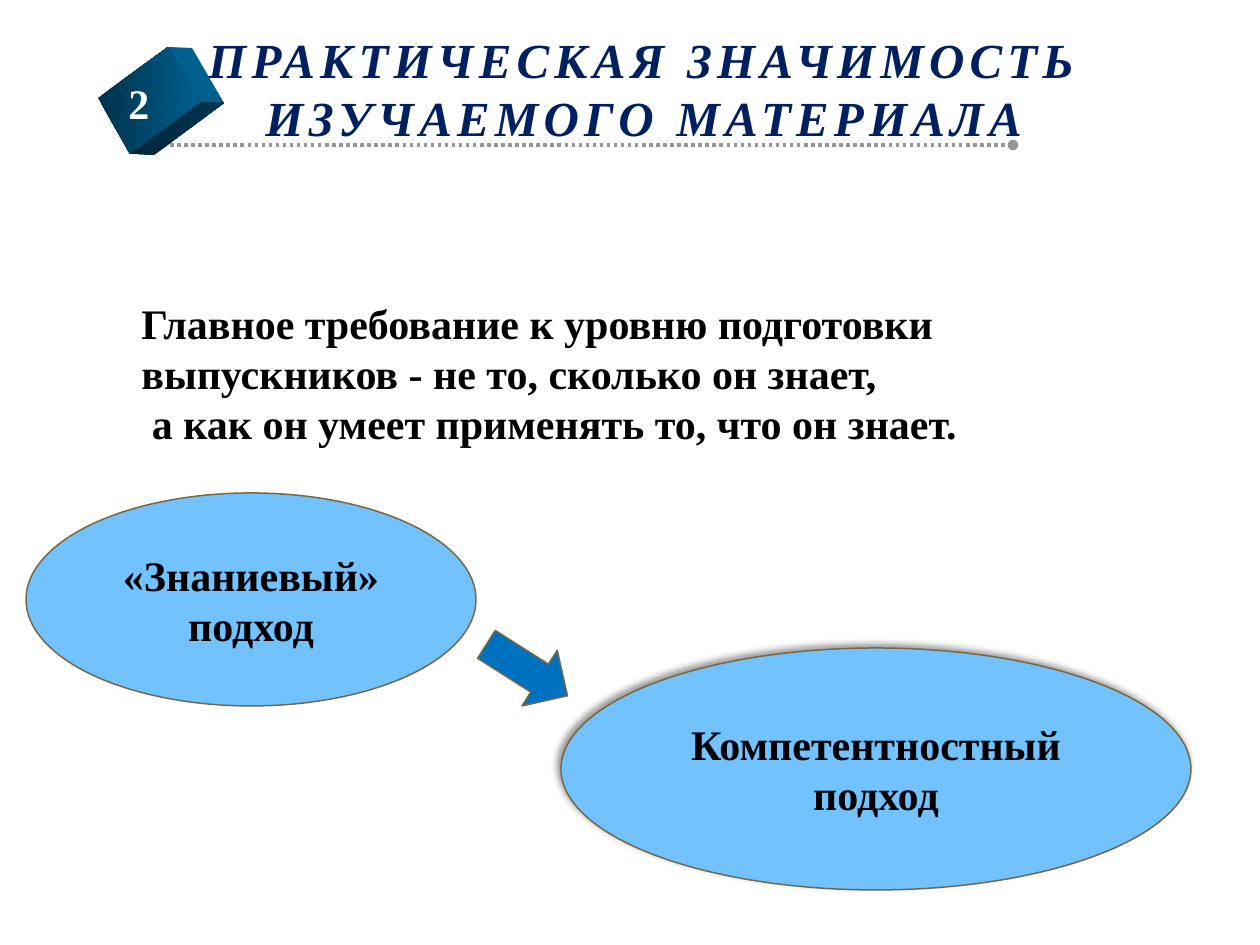
from lxml import etree
from pptx import Presentation
from pptx.dml.color import RGBColor
from pptx.enum.dml import MSO_LINE
from pptx.enum.shapes import MSO_CONNECTOR, MSO_SHAPE
from pptx.enum.text import MSO_ANCHOR, PP_ALIGN
from pptx.oxml.ns import qn
from pptx.util import Pt

SCALE = 914400 / 126
FONT = "Times New Roman"
OVAL = MSO_SHAPE.OVAL
ARROW = MSO_SHAPE.DOWN_ARROW
LINE = MSO_CONNECTOR.STRAIGHT
DOTS = MSO_LINE.ROUND_DOT
LEFT, CENTER = PP_ALIGN.LEFT, PP_ALIGN.CENTER
TOP, MIDDLE, BOTTOM = MSO_ANCHOR.TOP, MSO_ANCHOR.MIDDLE, MSO_ANCHOR.BOTTOM


def px(*nums):
    return [round(n * SCALE) for n in nums]


def color(code):
    return RGBColor.from_string(code)


def write(shape, lines, ink="000000", size=24, align=LEFT, anchor=TOP, wrap=True):
    frame = shape.text_frame
    frame.word_wrap = wrap
    frame.vertical_anchor = anchor
    runs = []
    for i, line in enumerate(lines):
        para = frame.add_paragraph() if i else frame.paragraphs[0]
        para.alignment = align
        run = para.add_run()
        run.text = line
        run.font.name = FONT
        run.font.size = Pt(size)
        run.font.bold = True
        run.font.color.rgb = color(ink)
        runs.append(run)
    return runs


def add_text(slide, box, lines, **style):
    return write(slide.shapes.add_textbox(*px(*box)), lines, **style)


def add_title(slide, box, text):
    for run in add_text(slide, box, [text], ink="002060", size=28,
                        align=CENTER, anchor=BOTTOM):
        run.font.italic = True
        run.font._element.set("spc", "300")


def add_form(slide, kind, box, fill, turn=0):
    shape = slide.shapes.add_shape(kind, *px(*box))
    shape.shadow.inherit = False
    shape.fill.solid()
    shape.fill.fore_color.rgb = color(fill)
    shape.line.color.rgb = color("756944")
    shape.line.width = Pt(0.85)
    shape.rotation = turn
    return shape


def add_oval(slide, box, text):
    shape = add_form(slide, OVAL, box, "71C2FF")
    write(shape, [text], align=CENTER, anchor=MIDDLE)
    return shape


def add_shade(shape):
    effects = shape._element.spPr.find(qn("a:effectLst"))
    shade = etree.SubElement(effects, qn("a:outerShdw"), blurRad=str(Pt(4)),
                             dist=str(Pt(3)), dir="13500000", rotWithShape="0")
    tint = etree.SubElement(shade, qn("a:srgbClr"), val="000000")
    etree.SubElement(tint, qn("a:alpha"), val="40000")


def add_rule(slide, x1, x2, y):
    rule = slide.shapes.add_connector(LINE, *px(x1, y, x2, y))
    rule.line.color.rgb = color("969696")
    rule.line.width = Pt(2)
    rule.line.dash_style = DOTS
    etree.SubElement(rule.line._get_or_add_ln(), qn("a:tailEnd"), type="oval")
    etree.SubElement(rule._element.spPr, qn("a:effectLst"))


def add_face(slide, points, start, end):
    path = slide.shapes.build_freeform(*points[0], scale=SCALE)
    path.add_line_segments(points[1:])
    face = path.convert_to_shape()
    face.shadow.inherit = False
    face.line.fill.background()
    face.fill.gradient()
    face.fill.gradient_angle = 0
    for stop, code in zip(face.fill.gradient_stops, (start, end)):
        stop.color.rgb = color(code)


def add_block(slide):
    front = [(98, 98), (168, 47), (200, 102), (130, 154)]
    back = [(x + 24, y + 1) for x, y in front]
    add_face(slide, [front[1], back[1], back[2], front[2]], "005F8F", "005F8F")
    add_face(slide, [front[3], front[2], back[2], back[3]], "00263A", "003450")
    add_face(slide, front, "00324B", "005F8F")


def main():
    deck = Presentation()
    deck.slide_width, deck.slide_height = px(1260, 945)
    slide = deck.slides.add_slide(deck.slide_layouts[6])
    add_title(slide, (150, 21, 988, 132),
              "ПРАКТИЧЕСКАЯ ЗНАЧИМОСТЬ ИЗУЧАЕМОГО МАТЕРИАЛА")
    add_rule(slide, 156, 1013, 145)
    add_block(slide)
    add_text(slide, (116, 71, 63, 63), ["2"], ink="FFFFFF", wrap=False)
    add_oval(slide, (26, 493, 450, 213), "«Знаниевый» подход")
    add_shade(add_oval(slide, (561, 648, 630, 242), "Компетентностный подход"))
    add_form(slide, ARROW, (494, 622, 66, 96), "0070C0", 302.4)
    add_text(slide, (129, 291, 955, 165), [
        "Главное требование к уровню подготовки выпускников - не то, сколько он знает,",
        " а как он умеет применять то, что он знает."])
    deck.save("out.pptx")


if __name__ == "__main__":
    main()
